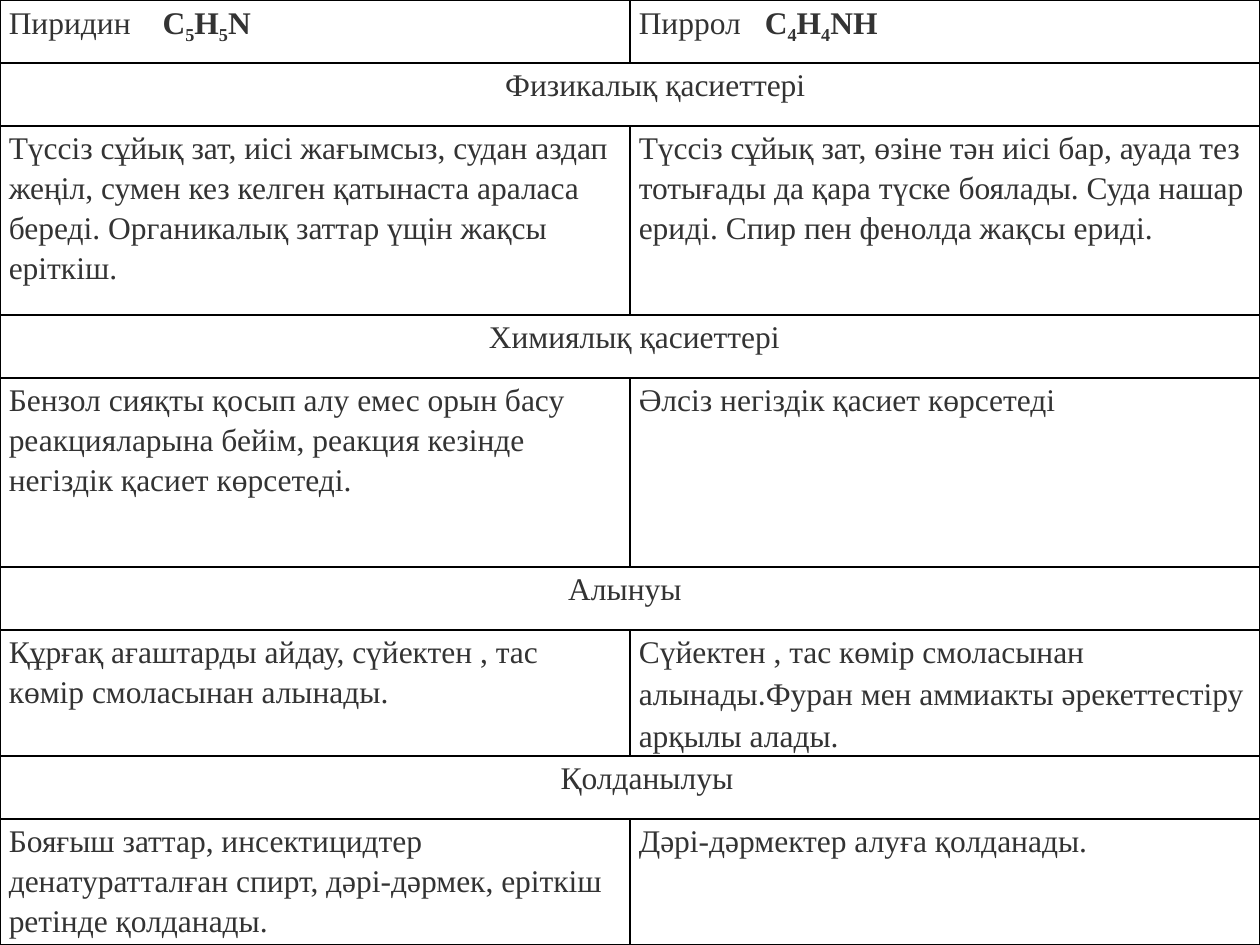
from lxml import etree
from pptx import Presentation
from pptx.dml.color import RGBColor
from pptx.oxml.ns import qn
from pptx.util import Inches, Pt

THEME = {
    "font": "Times New Roman",
    "stop_font": "Calibri",
    "size": Pt(18),
    "text": RGBColor(0x33, 0x33, 0x33),
    "border": "000000",
    "border_width": Pt(1),
    "line_spacing": 1.15,
}
MARGINS = {
    "margin_left": Inches(0.07),
    "margin_right": Inches(0.07),
    "margin_top": 0,
    "margin_bottom": 0,
}
BOLD = {"bold": True}
SUB = {"bold": True, "baseline": "-25000"}
STOP = {"name": THEME["stop_font"]}

COMPOUNDS = [
    ("Пиридин", 1.22, [("C", BOLD), ("5", SUB), ("H", BOLD), ("5", SUB), ("N", BOLD)]),
    ("Пиррол", 1, [("C", BOLD), ("4", SUB), ("H", BOLD), ("4", SUB), ("NH", BOLD)]),
]
SECTIONS = [
    ("Физикалық қасиеттері", 3.94, 1.5, [
        [("Түссіз сұйық зат, иісі жағымсыз, судан аздап жеңіл, сумен кез келген "
          "қатынаста араласа береді. Органикалық заттар үщін жақсы еріткіш.", {})],
        [("Түссіз сұйық зат, өзіне тән иісі бар, ауада тез тотығады да қара түске "
          "боялады. Суда нашар ериді. Спир пен фенолда жақсы ериді.", {})],
    ]),
    ("Химиялық қасиеттері", 3.81, 1.5, [
        [("Бензол сияқты қосып алу емес орын басу реакцияларына бейім, реакция "
          "кезінде негіздік қасиет көрсетеді.", {})],
        [("Әлсіз негіздік қасиет көрсетеді", {})],
    ]),
    ("Алынуы", 4.44, 1, [
        [("Құрғақ ағаштарды айдау, сүйектен , тас көмір смоласынан алынады.", {})],
        [("Сүйектен , тас көмір смоласынан алынады", {}), (".", STOP),
         ("Фуран мен аммиакты әрекеттестіру арқылы алады.", {})],
    ]),
    ("Қолданылуы", 4.38, 1, [
        [("Бояғыш заттар, инсектицидтер денатуратталған спирт, дәрі-дәрмек, "
          "еріткіш ретінде қолданады.", {})],
        [("Дәрі-дәрмектер алуға қолданады.", {})],
    ]),
]
HEADING_HEIGHT = 0.5


def write(cell, runs, indent=0, tab=None):
    p = cell.text_frame.paragraphs[0]
    p.line_spacing = THEME["line_spacing"]
    pPr = p._p.get_or_add_pPr()
    if indent:
        pPr.set("marL", str(Inches(indent)))
        pPr.set("indent", "0")
    if tab:
        tabs = etree.SubElement(pPr, qn("a:tabLst"))
        etree.SubElement(tabs, qn("a:tab"), pos=str(Inches(tab)), algn="l")
    for text, style in runs:
        r = p.add_run()
        r.text = text
        font = {"name": THEME["font"], "size": THEME["size"], "bold": False, **style}
        baseline = font.pop("baseline", None)
        for key, value in font.items():
            setattr(r.font, key, value)
        r.font.color.rgb = THEME["text"]
        if baseline:
            r._r.get_or_add_rPr().set("baseline", baseline)


def style_cell(cell):
    for key, value in MARGINS.items():
        setattr(cell, key, value)
    cell.fill.background()
    tcPr = cell._tc.get_or_add_tcPr()
    for i, side in enumerate(("a:lnL", "a:lnR", "a:lnT", "a:lnB")):
        ln = etree.Element(qn(side), w=str(THEME["border_width"]))
        fill = etree.SubElement(ln, qn("a:solidFill"))
        etree.SubElement(fill, qn("a:srgbClr"), val=THEME["border"])
        tcPr.insert(i, ln)


def main():
    prs = Presentation()
    prs.slide_width, prs.slide_height = Inches(10), Inches(7.5)
    s = prs.slides.add_slide(prs.slide_layouts[6])
    heights = [HEADING_HEIGHT]
    for section in SECTIONS:
        heights += [HEADING_HEIGHT, section[2]]
    table = s.shapes.add_table(
        len(heights), len(COMPOUNDS), 0, 0, prs.slide_width, Inches(sum(heights))
    ).table
    table.first_row = table.horz_banding = False
    for row, height in zip(table.rows, heights):
        row.height = Inches(height)
    for cell in table.iter_cells():
        style_cell(cell)

    for col, (name, tab, formula) in enumerate(COMPOUNDS):
        write(table.cell(0, col), [(name + "\t", {}), *formula], tab=tab)
    for i, (heading, indent, _, columns) in enumerate(SECTIONS):
        top = 1 + 2 * i
        title = table.cell(top, 0)
        title.merge(table.cell(top, len(COMPOUNDS) - 1))
        write(title, [(heading, {})], indent=indent)
        for col, runs in enumerate(columns):
            write(table.cell(top + 1, col), runs)
    prs.save("out.pptx")


if __name__ == "__main__":
    main()
